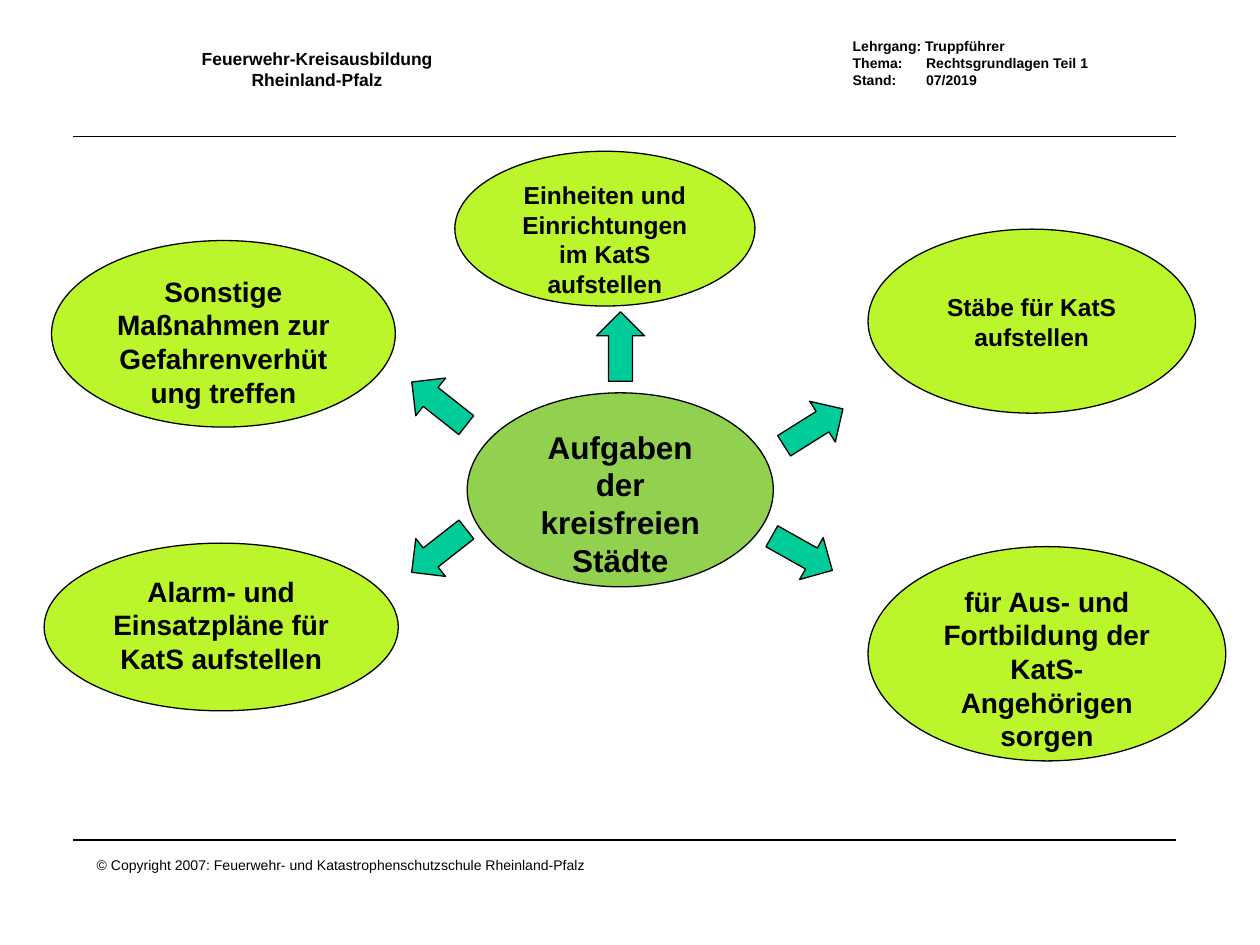
from dataclasses import dataclass

from lxml import etree
from pptx import Presentation
from pptx.dml.color import RGBColor
from pptx.enum.shapes import MSO_CONNECTOR, MSO_SHAPE
from pptx.enum.text import MSO_ANCHOR, PP_ALIGN
from pptx.oxml.ns import qn
from pptx.util import Cm, Pt

OVAL, ARROW = MSO_SHAPE.OVAL, MSO_SHAPE.RIGHT_ARROW
LINE = MSO_CONNECTOR.STRAIGHT
LEFT, CENTER, TOP = PP_ALIGN.LEFT, PP_ALIGN.CENTER, MSO_ANCHOR.TOP


@dataclass(frozen=True)
class Theme:
    font: str = "Arial"
    ink: str = "000000"
    hub: str = "92D050"
    task: str = "BBF52B"
    arrow: str = "00CC99"
    small: int = 8
    head: int = 10
    medium: int = 14
    large: int = 16
    title: int = 18
    edge: float = 0.75
    rule: float = 1


class Page:
    def __init__(self, slide, theme):
        self.slide = slide
        self.theme = theme

    def fill_text(self, frame, text, size, bold, align, tab=None):
        frame.text = text
        for para in frame.paragraphs:
            para.alignment = align
            if tab:
                stops = etree.SubElement(para._p.get_or_add_pPr(), qn("a:tabLst"))
                etree.SubElement(stops, qn("a:tab"), pos=str(Cm(tab)), algn="l")
            for run in para.runs:
                font = run.font
                font.name, font.size, font.bold = self.theme.font, Pt(size), bold
                font.color.rgb = RGBColor.from_string(self.theme.ink)

    def label(self, box, text, size, bold=True, align=LEFT, tab=None):
        frame = self.slide.shapes.add_textbox(*map(Cm, box)).text_frame
        frame.word_wrap = False
        self.fill_text(frame, text, size, bold, align, tab)

    def rule(self, left, right, y):
        line = self.slide.shapes.add_connector(
            LINE, Cm(left), Cm(y), Cm(right), Cm(y))
        line.line.color.rgb = RGBColor.from_string(self.theme.ink)
        line.line.width = Pt(self.theme.rule)
        etree.SubElement(line._element.spPr, qn("a:effectLst"))

    def shape(self, kind, box, fill):
        item = self.slide.shapes.add_shape(kind, *map(Cm, box))
        item.shadow.inherit = False
        item.fill.solid()
        item.fill.fore_color.rgb = RGBColor.from_string(fill)
        item.line.color.rgb = RGBColor.from_string(self.theme.ink)
        item.line.width = Pt(self.theme.edge)
        return item

    def oval(self, box, text, size, fill, drop=0):
        frame = self.shape(OVAL, box, fill).text_frame
        frame.word_wrap = True
        frame.vertical_anchor = TOP
        frame.margin_top = Cm(0.13 + drop)
        self.fill_text(frame, text, size, True, CENTER)

    def arrow(self, left, top, angle):
        item = self.shape(ARROW, (left, top, 1.4, 0.97), self.theme.arrow)
        item.rotation = angle


def main():
    deck = Presentation()
    deck.slide_width, deck.slide_height = Cm(25.4), Cm(19.05)
    theme = Theme()
    page = Page(deck.slides.add_slide(deck.slide_layouts[6]), theme)

    # Header and footer
    page.label((3.81, 0.84, 5.16, 1.09),
               "Feuerwehr-Kreisausbildung\nRheinland-Pfalz", theme.head, align=CENTER)
    page.label((16.94, 0.64, 5.33, 1.7),
               "Lehrgang: Truppführer\nThema:\tRechtsgrundlagen Teil 1\nStand:\t07/2019",
               theme.small, tab=1.48)
    for y in (2.75, 16.93):
        page.rule(1.48, 23.7, y)
    page.label((1.7, 17.15, 10.39, 0.58),
               "© Copyright 2007: Feuerwehr- und Katastrophenschutzschule Rheinland-Pfalz",
               theme.small, bold=False)

    # Hub
    page.oval((9.42, 7.92, 6.17, 3.91), "Aufgaben der kreisfreien Städte",
              theme.title, theme.hub)

    # Tasks around the hub
    tasks = [
        ((17.5, 4.62, 6.6, 3.71), "Stäbe für KatS aufstellen", theme.medium, 0.6),
        ((0.89, 10.95, 7.14, 3.38), "Alarm- und Einsatzpläne für KatS aufstellen",
         theme.large, 0),
        ((17.5, 11.02, 7.21, 4.32),
         "für Aus- und Fortbildung der KatS-Angehörigen sorgen", theme.large, 0),
        ((1.04, 4.85, 6.93, 3.76),
         "Sonstige Maßnahmen zur Gefahrenverhütung treffen", theme.large, 0),
        ((9.17, 3.05, 6.05, 3.12),
         "Einheiten und Einrichtungen im KatS aufstellen", theme.medium, 0),
    ]
    for box, text, size, drop in tasks:
        page.oval(box, text, size, theme.task, drop)

    # Arrows from hub to tasks
    for left, top, angle in [(15.7, 8.13, 327.9), (15.47, 10.67, 29.4),
                             (8.15, 10.62, 141.9), (8.15, 7.65, 218.3),
                             (11.81, 6.5, 270)]:
        page.arrow(left, top, angle)

    deck.save("out.pptx")


if __name__ == "__main__":
    main()
